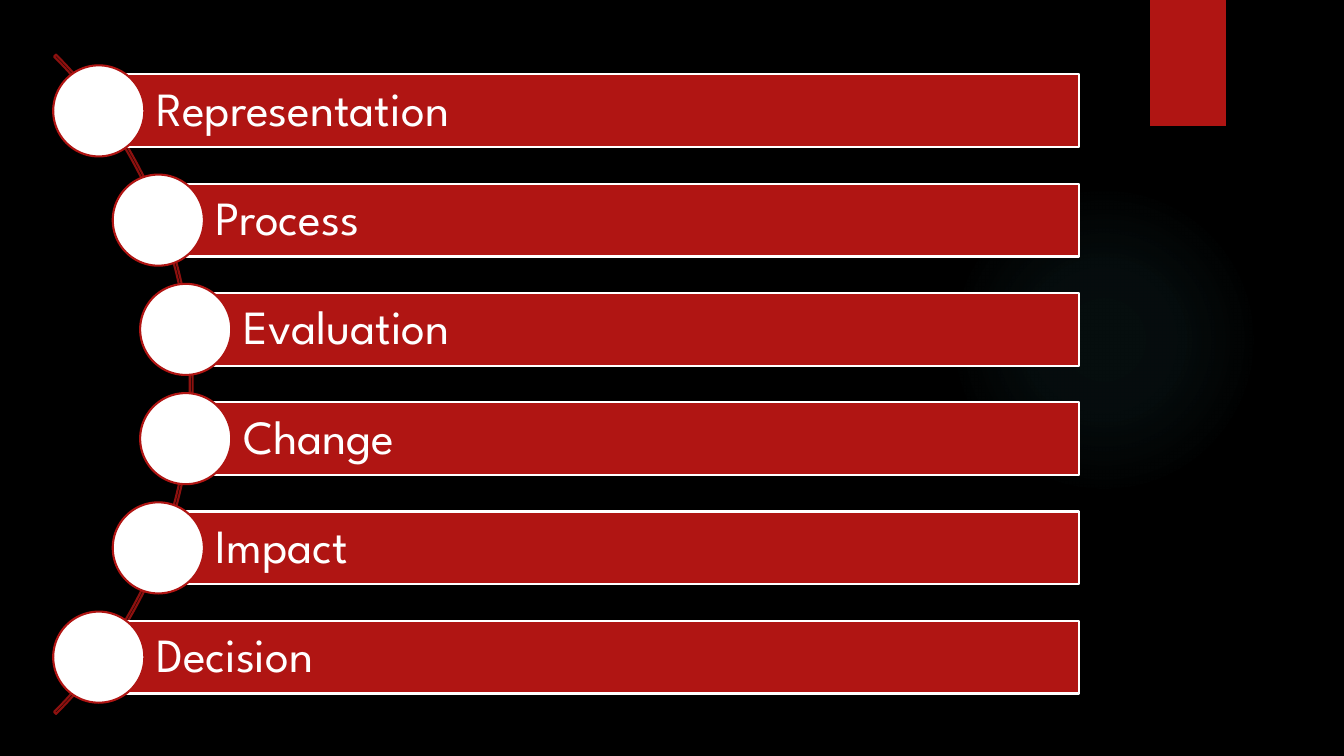
from lxml import etree
from pptx import Presentation
from pptx import util as u
from pptx.dml.color import RGBColor
from pptx.enum import shapes, text
from pptx.oxml import parse_xml
from pptx.oxml.ns import nsdecls, qn

COLORS = {"background": "000000", "red": "B01513", "dark_red": "8D110F",
          "white": "FFFFFF", "glow": "50B9C1"}
FONT = "League Spartan"

# Steps and the horizontal centre of each circle, in percent of slide width
STEPS = [("Representation", 7.35), ("Process", 11.78), ("Evaluation", 13.82),
         ("Change", 13.82), ("Impact", 11.78), ("Decision", 7.35)]

# Vertical rhythm and sizes, in percent of the slide
FIRST_ROW, LAST_ROW = 14.67, 86.93
ROW_PITCH = (LAST_ROW - FIRST_ROW) / (len(STEPS) - 1)
BAR_RIGHT, BAR_HEIGHT = 80.29, 9.64
CIRCLE_WIDTH, CIRCLE_HEIGHT = 6.78, 12.05


class StepSlide:
    """Draws on one slide; all lengths are percent of its width or height."""

    def __init__(self, presentation):
        self.width = presentation.slide_width
        self.height = presentation.slide_height
        self.slide = presentation.slides.add_slide(presentation.slide_layouts[6])
        background = self.slide.background.fill
        background.solid()
        background.fore_color.rgb = self.color("background")

    def color(self, name):
        return RGBColor.from_string(COLORS[name])

    def shape(self, kind, left, top, width, height, fill=None, line=None):
        shape = self.slide.shapes.add_shape(
            kind, round(self.width * left / 100), round(self.height * top / 100),
            round(self.width * width / 100), round(self.height * height / 100))
        shape.shadow.inherit = False
        if fill:
            shape.fill.solid()
            shape.fill.fore_color.rgb = self.color(fill)
        else:
            shape.fill.background()
        if line:
            shape.line.color.rgb = self.color(line)
            shape.line.width = u.Pt(1.5)
        else:
            shape.line.fill.background()
        return shape

    def glow(self, left, top, width, height):
        shape = self.shape(shapes.MSO_SHAPE.OVAL, left, top, width, height)
        stops = "".join(
            f'<a:gs pos="{position * 1000}"><a:srgbClr val="{COLORS["glow"]}">'
            f'<a:alpha val="{alpha * 1000}"/></a:srgbClr></a:gs>'
            for position, alpha in [(0, 7), (36, 6), (69, 0), (100, 0)])
        gradient = parse_xml(
            f'<a:gradFill {nsdecls("a")}><a:gsLst>{stops}</a:gsLst>'
            '<a:path path="circle"><a:fillToRect l="50000" t="50000" '
            'r="50000" b="50000"/></a:path></a:gradFill>')
        properties = shape.element.spPr
        properties.replace(properties.find(qn("a:noFill")), gradient)

    def ribbon(self, left, top, width, height):
        shape = self.shape(shapes.MSO_SHAPE.RECTANGLE, left, top, width, height, "red")
        effects = shape.element.spPr.find(qn("a:effectLst"))
        shadow = etree.SubElement(effects, qn("a:outerShdw"), blurRad=str(u.Pt(3)),
                                  dist=str(u.Pt(2)), dir="5400000")
        tint = etree.SubElement(shadow, qn("a:srgbClr"), val=COLORS["background"])
        etree.SubElement(tint, qn("a:alpha"), val="45000")

    def arc(self, left, top, width, height):
        shape = self.shape(shapes.MSO_SHAPE.BLOCK_ARC, left, top, width, height,
                           line="dark_red")
        for index, value in enumerate((189, 27, 0.003)):
            shape.adjustments[index] = value

    def bar(self, label, left, middle):
        shape = self.shape(shapes.MSO_SHAPE.RECTANGLE, left, middle - BAR_HEIGHT / 2,
                           BAR_RIGHT - left, BAR_HEIGHT, "red", "white")
        frame = shape.text_frame
        frame.word_wrap = True
        frame.vertical_anchor = text.MSO_ANCHOR.MIDDLE
        frame.margin_left = u.Inches(0.57)
        frame.margin_right = frame.margin_top = frame.margin_bottom = u.Inches(0.09)
        paragraph = frame.paragraphs[0]
        paragraph.alignment = text.PP_ALIGN.LEFT
        paragraph.line_spacing = 0.9
        run = paragraph.add_run()
        run.text = label
        run.font.name = FONT
        run.font.size = u.Pt(34)
        run.font.color.rgb = self.color("white")

    def circle(self, center, middle):
        self.shape(shapes.MSO_SHAPE.OVAL, center - CIRCLE_WIDTH / 2,
                   middle - CIRCLE_HEIGHT / 2, CIRCLE_WIDTH, CIRCLE_HEIGHT,
                   "white", "red")


def main():
    presentation = Presentation()
    presentation.slide_width = u.Inches(13.33)
    presentation.slide_height = u.Inches(7.5)
    slide = StepSlide(presentation)

    # Backdrop
    slide.glow(70.58, 24.4, 23.1, 41.07)
    slide.ribbon(85.58, 0, 5.63, 16.67)

    # Curved list of steps
    slide.arc(-55.05, -10.83, 69.38, 123.33)
    for row, (label, center) in enumerate(STEPS):
        middle = FIRST_ROW + row * ROW_PITCH
        slide.bar(label, center, middle)
        slide.circle(center, middle)

    presentation.save("out.pptx")


if __name__ == "__main__":
    main()
